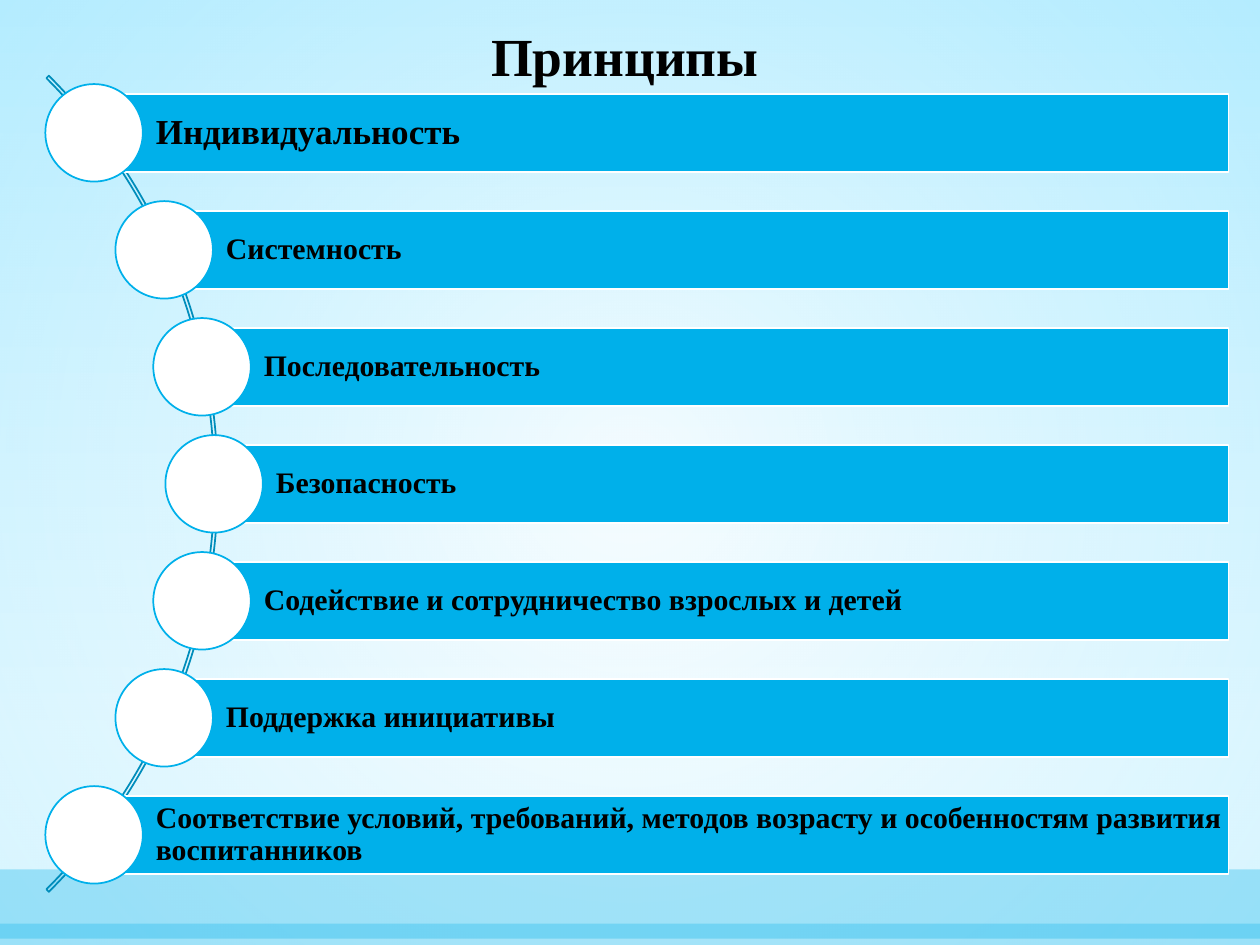
from math import sqrt

from pptx import Presentation
from pptx.dml.color import RGBColor
from pptx.enum.shapes import MSO_SHAPE as SHAPE
from pptx.enum.text import MSO_ANCHOR as ANCHOR, PP_ALIGN as ALIGN
from pptx.oxml import parse_xml
from pptx.oxml.ns import nsdecls, qn
from pptx.util import Inches, Pt

W, H = 10, 7.5
FONT = "Times New Roman"
BLUE, DARK_BLUE, WHITE, BLACK = "00B0EA", "008DBB", "FFFFFF", "000000"

PRINCIPLES = [
    "Индивидуальность",
    "Системность",
    "Последовательность",
    "Безопасность",
    "Содействие и сотрудничество взрослых и детей",
    "Поддержка инициативы",
    "Соответствие условий, требований, методов возрасту "
    "и особенностям развития воспитанников",
]


def rgb(value):
    return RGBColor.from_string(value)


def add_shape(slide, kind, box, fill=None, line=None):
    sp = slide.shapes.add_shape(kind, *(Inches(v) for v in box))
    sp.shadow.inherit = False
    if fill:
        sp.fill.solid()
        sp.fill.fore_color.rgb = rgb(fill)
    else:
        sp.fill.background()
    if line:
        sp.line.color.rgb = rgb(line)
        sp.line.width = Pt(1)
    else:
        sp.line.fill.background()
    return sp


def set_alpha(sp, percent):
    color = sp._element.spPr.find(qn("a:solidFill"))[0]
    color.append(parse_xml(f'<a:alpha {nsdecls("a")} val="{percent * 1000}"/>'))


def swap_gradient(element, stops, direction):
    """Replace the first solid fill in element by a gradient."""
    gs = "".join(
        f'<a:gs pos="{pos * 1000}"><a:srgbClr val="{color}">'
        f'<a:alpha val="{alpha * 1000}"/></a:srgbClr></a:gs>'
        for pos, color, alpha in stops)
    solid = element.find(".//" + qn("a:solidFill"))
    solid.getparent().replace(solid, parse_xml(
        f'<a:gradFill {nsdecls("a")} rotWithShape="1">'
        f'<a:gsLst>{gs}</a:gsLst>{direction}</a:gradFill>'))


def write(sp, text, size, anchor, align):
    tf = sp.text_frame
    tf.word_wrap = True
    tf.vertical_anchor = anchor
    p = tf.paragraphs[0]
    p.text = text
    p.alignment = align
    p.line_spacing = 0.9
    font = p.runs[0].font
    font.name, font.size, font.bold = FONT, Pt(size), True
    font.color.rgb = rgb(BLACK)
    return tf


def add_backdrop(slide):
    # Vertical gradient behind everything
    slide.background.fill.solid()
    slide.background.fill.fore_color.rgb = rgb(WHITE)
    swap_gradient(slide._element, [(0, "C8F1FF", 56), (79, WHITE, 100)],
                  '<a:lin ang="5400000" scaled="0"/>')
    # Radial glow
    glow = add_shape(slide, SHAPE.RECTANGLE, (0, 0, W, H), WHITE)
    swap_gradient(glow._element.spPr, [(0, WHITE, 49), (100, "91E4FF", 35)],
                  '<a:path path="circle"><a:fillToRect l="50000" t="50000" '
                  'r="50000" b="50000"/></a:path>')
    # Translucent bands at the foot
    for top, height, alpha in ((0.92 * H, 0.55, 30), (7.33, 0.17, 28)):
        band = add_shape(slide, SHAPE.RECTANGLE, (0, top, W, height), BLUE)
        set_alpha(band, alpha)


def add_title(slide, box, text):
    sp = slide.shapes.add_textbox(*(Inches(v) for v in box))
    write(sp, text, 30.6, ANCHOR.BOTTOM, ALIGN.CENTER)


def add_curved_list(slide, box, items):
    """Bars fill the rows of the box; their left ends follow an arc."""
    left, top, width, height = box
    right, mid = left + width, top + height / 2
    row = height / len(items)
    bar_h, dot = row * 2 / 3, row * 5 / 6
    radius, arc_size = 4.55, 9.16
    center_x = left + dot / 2 - sqrt(radius ** 2 - (3 * row) ** 2)

    # Thin arc behind the bars
    arc = add_shape(slide, SHAPE.BLOCK_ARC,
                    (center_x - arc_size / 2, mid - arc_size / 2,
                     arc_size, arc_size), line=DARK_BLUE)
    for i, value in enumerate((189, 27, 0.003)):
        arc.adjustments[i] = value

    for i, text in enumerate(items):
        y = top + (i + 0.5) * row
        x = center_x + sqrt(radius ** 2 - (y - mid) ** 2)
        # Bar with its label
        bar = add_shape(slide, SHAPE.RECTANGLE,
                        (x, y - bar_h / 2, right - x, bar_h), BLUE, WHITE)
        tf = write(bar, text, 17 if i else 20, ANCHOR.MIDDLE, ALIGN.LEFT)
        tf.margin_left = Inches(0.49)
        tf.margin_top = tf.margin_right = tf.margin_bottom = Inches(0.05)
        # Dot on the arc
        add_shape(slide, SHAPE.OVAL, (x - dot / 2, y - dot / 2, dot, dot),
                  WHITE, BLUE)


def main():
    prs = Presentation()
    prs.slide_width, prs.slide_height = Inches(W), Inches(H)
    slide = prs.slides.add_slide(prs.slide_layouts[6])
    add_backdrop(slide)
    add_title(slide, (1.06, 0.35, 0.78 * W, 0.4), "Принципы")
    add_curved_list(slide, (0.36, 0.59, 9.39, 6.5), PRINCIPLES)
    prs.save("out.pptx")


if __name__ == "__main__":
    main()
